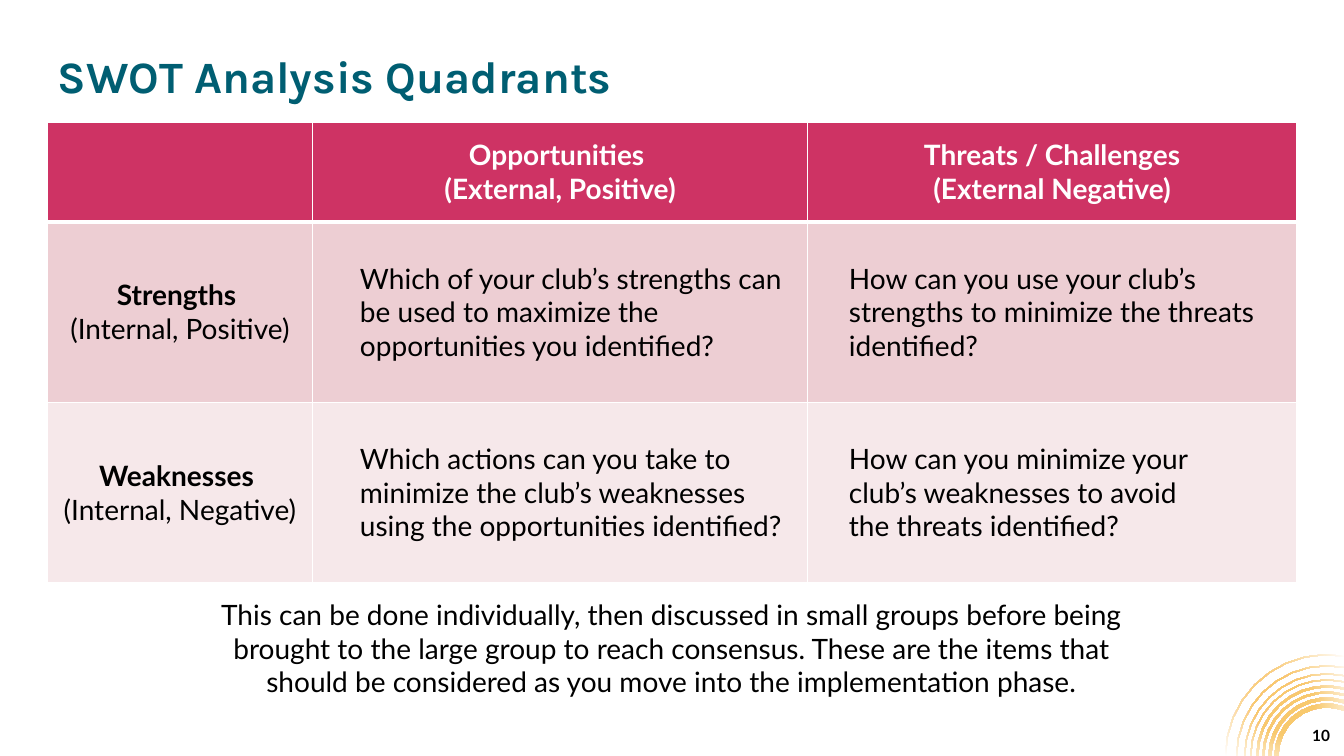
"""Build the SWOT analysis quadrants slide."""
import math
from dataclasses import dataclass

from lxml import etree
from pptx import Presentation
from pptx.dml.color import RGBColor
from pptx.enum.text import MSO_ANCHOR, MSO_AUTO_SIZE, PP_ALIGN
from pptx.oxml import parse_xml
from pptx.oxml.ns import nsdecls, qn
from pptx.util import Inches, Pt

LEFT, CENTER, RIGHT = PP_ALIGN.LEFT, PP_ALIGN.CENTER, PP_ALIGN.RIGHT
TOP, MIDDLE = MSO_ANCHOR.TOP, MSO_ANCHOR.MIDDLE
NO_FIT = MSO_AUTO_SIZE.NONE
SLIDE_WIDTH, SLIDE_HEIGHT = 13.33, 7.5
TITLE_FONT, BODY_FONT = "Karla", "Lato"
TEAL, BLACK, WHITE, GOLD = "005E72", "000000", "FFFFFF", "F8C96D"
ROW_FILLS = ("CE3364", "EDCED3", "F6E8EA")
ROW_HEIGHTS = (0.99, 1.79, 1.79)
COLUMN_WIDTHS = (2.63, 4.91, 4.85)
COLUMN_INDENTS = (0, 0.37, 0.31)
HEADER_BORDERS = {"L": 1, "R": 1, "T": 1, "B": 3}
QUADRANTS = (
    ("", "Opportunities \v(External, Positive)",
     "Threats / Challenges\v(External Negative)"),
    ("Strengths \n(Internal, Positive)",
     "Which of your club’s strengths can be used to maximize the opportunities you identified?",
     "How can you use your club’s strengths to minimize the threats identified?"),
    ("Weaknesses \v(Internal, Negative)",
     "Which actions can you take to minimize the club’s weaknesses "
     "using the opportunities identified?",
     "How can you minimize your \vclub’s weaknesses to avoid \vthe threats identified?"),
)
NOTE = ("This can be done individually, then discussed in small groups before being brought "
        "to the large group to reach consensus. These are the items that should be considered "
        "as you move into the implementation phase.")


@dataclass(frozen=True)
class Ring:
    """A thin sunburst arc."""
    radius: float
    thickness: float


@dataclass(frozen=True)
class Label:
    """A placed piece of text."""
    text: str
    left: float
    top: float
    width: float
    height: float
    size: float
    font: str = BODY_FONT
    color: str = BLACK
    bold: bool = False
    align: PP_ALIGN = LEFT
    anchor: MSO_ANCHOR = MIDDLE


RINGS = (Ring(0.52, 0.04), Ring(0.58, 0.03), Ring(0.64, 0.02), Ring(0.7, 0.02),
         Ring(0.76, 0.01), Ring(0.82, 0.01), Ring(0.9, 0.01), Ring(1.01, 0.01))
SUN_X, SUN_Y = 13.16, 7.5
ARC_STEPS = 9
TITLE = Label("SWOT Analysis Quadrants", 0.47, 0.4, 12.66, 0.77, 32, TITLE_FONT, TEAL, True)
LABELS = (
    Label("10", 10.29, 7.18, 3, 0.24, 11, bold=True, align=RIGHT),
    Label(NOTE, 1.95, 5.88, 9.42, 1.11, 20, align=CENTER, anchor=TOP),
)


def rgb(color: str) -> RGBColor:
    """Turn a hex string into a colour."""
    return RGBColor.from_string(color)


def style_span(span, size: float, font: str, color: str, bold: bool) -> None:
    """Format one run."""
    span.font.size = Pt(size)
    span.font.name = font
    span.font.color.rgb = rgb(color)
    span.font.bold = bold


def place_label(box, label: Label) -> None:
    """Position a box and fill it with formatted text."""
    box.left, box.top = Inches(label.left), Inches(label.top)
    box.width, box.height = Inches(label.width), Inches(label.height)
    frame = box.text_frame
    frame.text = label.text
    frame.word_wrap = True
    frame.auto_size = NO_FIT
    frame.vertical_anchor = label.anchor
    for para in frame.paragraphs:
        para.alignment = label.align
        for span in para.runs:
            style_span(span, label.size, label.font, label.color, label.bold)


def arc_points(radius: float) -> list[tuple[int, int]]:
    """List points from the slide's bottom edge to its right edge."""
    end = math.acos((SLIDE_WIDTH - SUN_X) / radius)
    angles = [math.pi + (end - math.pi) * step / ARC_STEPS for step in range(ARC_STEPS + 1)]
    return [(Inches(SUN_X + radius * math.cos(angle)), Inches(SUN_Y - radius * math.sin(angle)))
            for angle in angles]


def draw_sunburst(page) -> None:
    """Draw the concentric arcs as one shape with a radial gradient."""
    outlines = [arc_points(ring.radius) + arc_points(ring.radius - ring.thickness)[::-1]
                for ring in RINGS]
    builder = page.shapes.build_freeform(*outlines[0][0], scale=1.0)
    for index, outline in enumerate(outlines):
        if index:
            builder.move_to(*outline[0])
        builder.add_line_segments(outline[1:], close=True)
    sunburst = builder.convert_to_shape()
    sunburst.shadow.inherit = False
    sunburst.line.fill.background()
    gradient = parse_xml(
        f'<a:gradFill {nsdecls("a")}><a:gsLst>'
        f'<a:gs pos="37000"><a:srgbClr val="{GOLD}"/></a:gs>'
        f'<a:gs pos="100000"><a:srgbClr val="{WHITE}"/></a:gs></a:gsLst>'
        '<a:path path="circle"><a:fillToRect l="50000" t="50000" r="50000" b="50000"/></a:path>'
        '</a:gradFill>')
    sunburst.element.spPr.find(qn("a:custGeom")).addnext(gradient)


def add_border(cell, side: str, points: float) -> None:
    """Add a white border to one side of a cell."""
    line = etree.SubElement(cell._tc.get_or_add_tcPr(), qn(f"a:ln{side}"), w=str(Pt(points)))
    fill = etree.SubElement(line, qn("a:solidFill"))
    etree.SubElement(fill, qn("a:srgbClr"), val=WHITE)


def fill_cell(cell, row: int, column: int) -> None:
    """Write and format one quadrant cell."""
    header, side_header = row == 0, column == 0
    if header:
        for side, points in HEADER_BORDERS.items():
            add_border(cell, side, points)
    cell.fill.solid()
    cell.fill.fore_color.rgb = rgb(ROW_FILLS[row])
    cell.vertical_anchor = MIDDLE
    cell.text_frame.text = QUADRANTS[row][column]
    paragraphs = cell.text_frame.paragraphs
    for para in paragraphs:
        para.alignment = CENTER if header or side_header else LEFT
        if not header and not side_header:
            para._p.get_or_add_pPr().set("marL", str(Inches(COLUMN_INDENTS[column])))
    spans = [span for para in paragraphs for span in para.runs]
    for index, span in enumerate(spans):
        bold = header or (side_header and index == 0)
        style_span(span, 20, BODY_FONT, WHITE if header else BLACK, bold)


def draw_quadrants(page) -> None:
    """Draw the SWOT table."""
    table = page.shapes.add_table(
        len(ROW_HEIGHTS), len(COLUMN_WIDTHS), Inches(0.47), Inches(1.21),
        Inches(sum(COLUMN_WIDTHS)), Inches(sum(ROW_HEIGHTS))).table
    for column, width in enumerate(COLUMN_WIDTHS):
        table.columns[column].width = Inches(width)
    for row, height in enumerate(ROW_HEIGHTS):
        table.rows[row].height = Inches(height)
        for column in range(len(COLUMN_WIDTHS)):
            fill_cell(table.cell(row, column), row, column)


def main() -> None:
    """Build and save the deck."""
    deck = Presentation()
    deck.slide_width, deck.slide_height = Inches(SLIDE_WIDTH), Inches(SLIDE_HEIGHT)
    page = deck.slides.add_slide(deck.slide_layouts[5])
    draw_sunburst(page)
    place_label(page.shapes.title, TITLE)
    page.shapes.title.text_frame.paragraphs[0].line_spacing = 0.9
    draw_quadrants(page)
    for label in LABELS:
        box = page.shapes.add_textbox(0, 0, 0, 0)
        place_label(box, label)
    deck.save("out.pptx")


if __name__ == "__main__":
    main()
